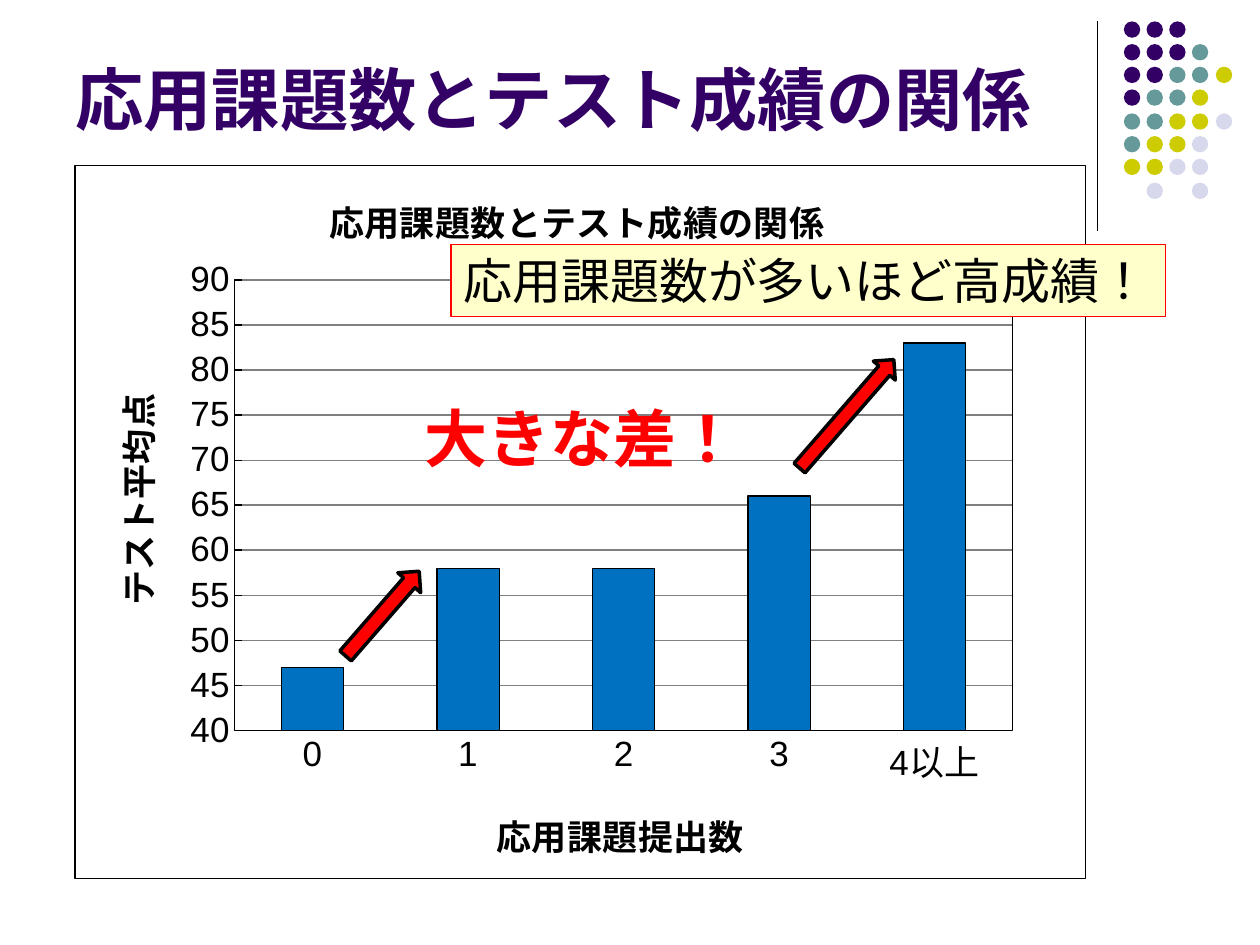
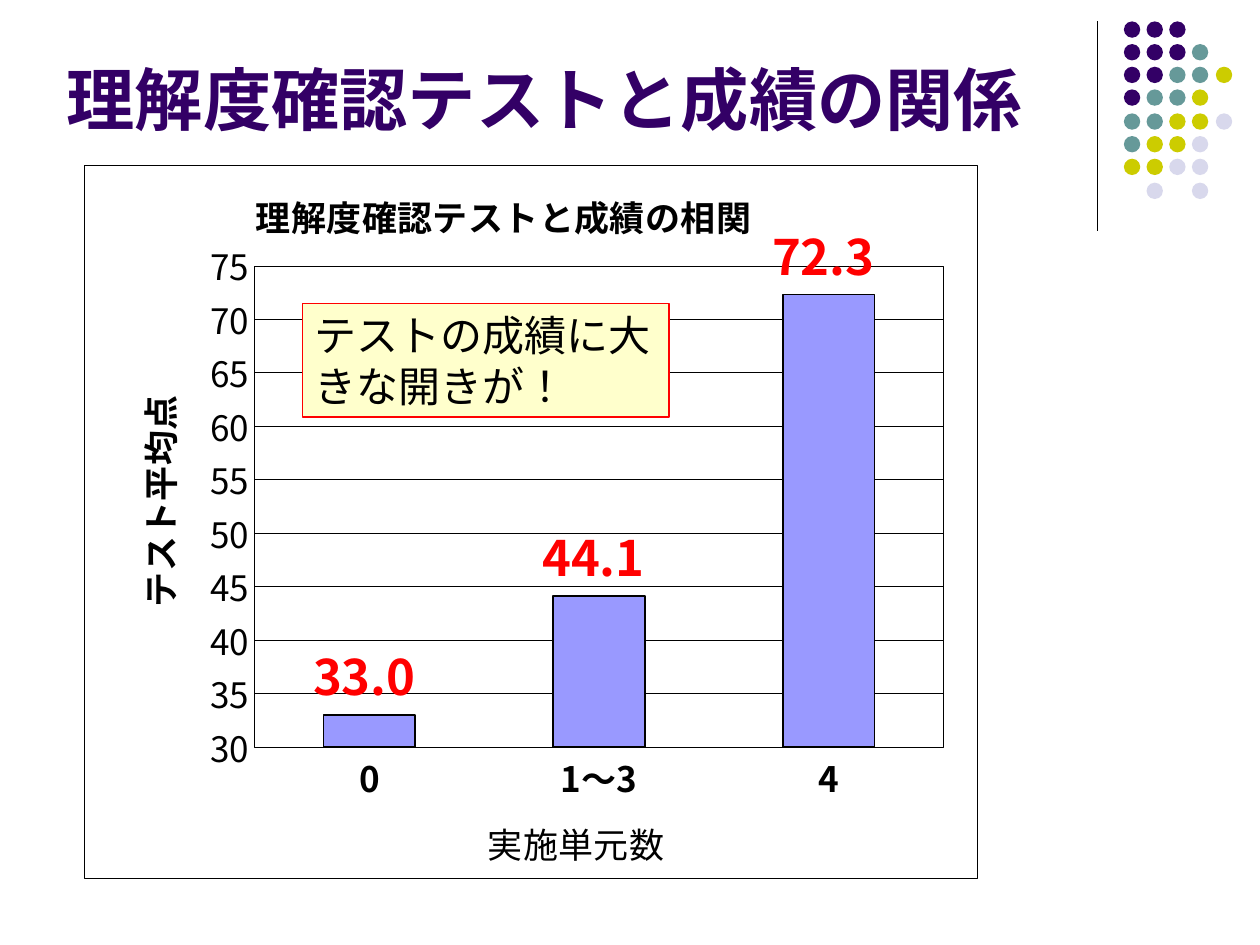
from dataclasses import dataclass

from pptx import Presentation
from pptx.chart.data import CategoryChartData
from pptx.dml.color import RGBColor
from pptx.enum.chart import XL_CHART_TYPE, XL_LABEL_POSITION, XL_TICK_MARK
from pptx.enum.lang import MSO_LANGUAGE_ID
from pptx.enum.shapes import MSO_CONNECTOR, MSO_SHAPE
from pptx.enum.text import MSO_ANCHOR
from pptx.oxml import parse_xml
from pptx.oxml.ns import nsdecls
from pptx.util import Emu, Pt

COLUMNS = XL_CHART_TYPE.COLUMN_CLUSTERED
OUTSIDE_END = XL_LABEL_POSITION.OUTSIDE_END
TICK_NONE, TICK_IN = XL_TICK_MARK.NONE, XL_TICK_MARK.INSIDE
JAPANESE = MSO_LANGUAGE_ID.JAPANESE
STRAIGHT = MSO_CONNECTOR.STRAIGHT
ELLIPSE, RIGHT_ARROW = MSO_SHAPE.OVAL, MSO_SHAPE.RIGHT_ARROW
TOP, BOTTOM = MSO_ANCHOR.TOP, MSO_ANCHOR.BOTTOM
PX = 9144


@dataclass(frozen=True)
class Theme:
    latin: str = "Arial"
    japanese: str = "Noto Sans CJK JP"
    black: str = "000000"
    white: str = "FFFFFF"
    purple: str = "330066"
    teal: str = "669999"
    olive: str = "CCCC00"
    lavender: str = "D8D8EC"
    red: str = "FF0000"
    cream: str = "FFFFCC"
    gray: str = "808080"
    blue: str = "0070C0"
    periwinkle: str = "9999FF"
    title_size: int = 39
    shout_size: int = 36
    label_size: int = 28
    remark_size: int = 24
    chart_size: int = 20
    hairline: float = 0.75


@dataclass(frozen=True)
class ChartStyle:
    font: str
    bar: str
    bar_line: float
    grid: str
    line: float
    plot: tuple
    title_at: tuple
    category_at: tuple
    value_at: tuple
    bold_categories: bool = False
    bold_category_title: bool = True
    label_format: str = ""


def rgb(color):
    return RGBColor.from_string(color)


def set_line(line, color, width):
    line.color.rgb = rgb(color)
    line.width = Pt(width)


def set_font(font, name, size, color, bold=False):
    font.name, font.size, font.bold = name, Pt(size), bold
    font.color.rgb = rgb(color)


def manual_layout(place, frame, inner=False):
    target = '<c:layoutTarget val="inner"/>' if inner else ""
    modes = "".join(f'<c:{axis}Mode val="edge"/>' for axis in "xy")
    values = "".join(f'<c:{key} val="{length / whole}"/>'
                     for key, length, whole in zip("xywh", place, frame * 2))
    return parse_xml(f'<c:layout {nsdecls("c")}><c:manualLayout>{target}{modes}{values}'
                     "</c:manualLayout></c:layout>")


def framed_area(fill, color, width):
    return parse_xml(
        f'<c:spPr {nsdecls("c", "a")}><a:solidFill><a:srgbClr val="{fill}"/></a:solidFill>'
        f'<a:ln w="{Pt(width)}"><a:solidFill><a:srgbClr val="{color}"/></a:solidFill></a:ln></c:spPr>')


class Deck:
    def __init__(self, theme):
        self.theme = theme
        self.file = Presentation()
        self.file.slide_width, self.file.slide_height = Emu(1000 * PX), Emu(750 * PX)
        self.slide = None

    def start_slide(self, title, left, top, height):
        self.slide = self.file.slides.add_slide(self.file.slide_layouts[6])
        self.corner_ornament()
        self.text(title, (left, top, 825, height), self.theme.title_size,
                  self.theme.purple, bold=True, anchor=BOTTOM)

    def box(self, place):
        return [Emu(value * PX) for value in place]

    def corner_ornament(self):
        theme = self.theme
        rule = self.slide.shapes.add_connector(STRAIGHT, *self.box((871, 17, 871, 183)))
        set_line(rule.line, theme.black, theme.hairline)
        rule._element.spPr.append(parse_xml(f'<a:effectLst {nsdecls("a")}/>'))
        colors = {"P": theme.purple, "T": theme.teal, "Y": theme.olive, "L": theme.lavender}
        rows = "PPP", "PPPT", "PPTTY", "PTTY", "TTYYL", "TYYL", "YYLL", "-L-L"
        dots = self.slide.shapes.add_group_shape()
        for row, pattern in enumerate(rows):
            for column, key in enumerate(pattern):
                if key in colors:
                    place = (892 + int(18.3 * column), 17 + int(18.3 * row), 13, 13)
                    dot = dots.shapes.add_shape(ELLIPSE, *self.box(place))
                    dot.shadow.inherit = False
                    dot.fill.solid()
                    dot.fill.fore_color.rgb = rgb(colors[key])
                    dot.line.fill.background()

    def add_run(self, paragraph, words, size, color, bold, font):
        run = paragraph.add_run()
        run.text = words
        set_font(run.font, font, size, color, bold)
        run.font.language_id = JAPANESE
        run.font._element.find("{*}latin").addnext(
            parse_xml(f'<a:ea {nsdecls("a")} typeface="{self.theme.japanese}"/>'))

    def text(self, words, place, size, color, bold=False, anchor=TOP):
        box = self.slide.shapes.add_textbox(*self.box(place))
        frame = box.text_frame
        frame.word_wrap = True
        frame.vertical_anchor = anchor
        self.add_run(frame.paragraphs[0], words, size, color, bold, self.theme.latin)
        return box

    def callout(self, words, place, size):
        box = self.text(words, place, size, self.theme.black)
        box.fill.solid()
        box.fill.fore_color.rgb = rgb(self.theme.cream)
        set_line(box.line, self.theme.red, self.theme.hairline)

    def rising_arrow(self, place):
        arrow = self.slide.shapes.add_shape(RIGHT_ARROW, *self.box(place))
        arrow.shadow.inherit = False
        arrow.rotation = 311
        arrow.fill.solid()
        arrow.fill.fore_color.rgb = rgb(self.theme.red)
        set_line(arrow.line, self.theme.black, 2)

    def chart_heading(self, heading, words, layout, font, bold=True, rotation=0):
        paragraph = heading.text_frame.paragraphs[0]
        self.add_run(paragraph, words, self.theme.chart_size, self.theme.black, bold, font)
        element = heading._element
        for default in element.xpath("c:layout"):
            element.remove(default)
        element.xpath("c:tx")[0].addnext(layout)
        body = element.xpath("c:tx/c:rich/a:bodyPr")[0]
        body.set("rot", str(rotation * 60000))
        body.set("vert", "horz")

    def column_chart(self, place, titles, points, limits, style):
        theme, frame = self.theme, place[2:]
        data = CategoryChartData()
        data.categories = list(points)
        data.add_series("テスト平均点", list(points.values()))
        chart = self.slide.shapes.add_chart(COLUMNS, *self.box(place), data).chart
        chart.has_legend = False
        set_font(chart.font, style.font, theme.chart_size, theme.black)

        title, category_title, value_title = titles
        category, value = chart.category_axis, chart.value_axis
        chart.has_title = True
        self.chart_heading(chart.chart_title, title,
                           manual_layout(style.title_at, frame), style.font)
        self.chart_heading(category.axis_title, category_title,
                           manual_layout(style.category_at, frame),
                           style.font, style.bold_category_title)
        self.chart_heading(value.axis_title, value_title,
                           manual_layout(style.value_at, frame), style.font, rotation=-90)

        for axis, tick, bold in ((category, TICK_NONE, style.bold_categories),
                                 (value, TICK_IN, False)):
            axis.major_tick_mark, axis.minor_tick_mark = tick, TICK_NONE
            set_line(axis.format.line, theme.black, style.line)
            set_font(axis.tick_labels.font, style.font, theme.chart_size, theme.black, bold)
        value.minimum_scale, value.maximum_scale = limits
        value.major_unit = 5
        value.has_major_gridlines = True
        set_line(value.major_gridlines.format.line, style.grid, style.line)

        bars = chart.plots[0]
        bars.gap_width, bars.vary_by_categories = 150, False
        scores = bars.series[0]
        scores.format.fill.solid()
        scores.format.fill.fore_color.rgb = rgb(style.bar)
        set_line(scores.format.line, theme.black, style.bar_line)
        if style.label_format:
            labels = scores.data_labels
            labels.show_value = True
            labels.position = OUTSIDE_END
            labels.number_format, labels.number_format_is_linked = style.label_format, False
            set_font(labels.font, style.font, theme.label_size, theme.red, True)

        plot_area = chart.element.xpath("c:chart/c:plotArea")[0]
        for default in plot_area.xpath("c:layout"):
            plot_area.remove(default)
        plot_area.insert(0, manual_layout(style.plot, frame, inner=True))
        plot_area.append(framed_area(theme.white, theme.black, style.line))
        chart.element.xpath("c:chart")[0].addnext(
            framed_area(theme.white, theme.black, style.line))


def main():
    theme = Theme()
    deck = Deck(theme)

    assignments = ChartStyle(
        font=theme.latin, bar=theme.blue, bar_line=0.75, grid=theme.gray, line=0.75,
        plot=(127, 91, 618, 358), title_at=(197, 16),
        category_at=(330, 504), value_at=(21, 176))
    deck.start_slide("応用課題数とテスト成績の関係", 50, 13, 102)
    deck.column_chart(
        (59, 131, 803, 567),
        ("応用課題数とテスト成績の関係", "応用課題提出数", "テスト平均点"),
        {"0": 47, "1": 58, "2": 58, "3": 66, "4以上": 83}, (40, 90), assignments)
    deck.callout("応用課題数が多いほど高成績！", (358, 194, 567, 57), theme.label_size)
    deck.rising_arrow((259, 475, 89, 24))
    deck.rising_arrow((615, 317, 114, 23))
    deck.text("大きな差！", (327, 312, 291, 71), theme.shout_size, theme.red, bold=True)

    comprehension = ChartStyle(
        font=theme.japanese, bar=theme.periwinkle, bar_line=1, grid=theme.black, line=0.25,
        plot=(135, 80, 547, 383), title_at=(131, 12),
        category_at=(315, 511), value_at=(31, 178),
        bold_categories=True, bold_category_title=False,
        label_format=r"#,##0.0_);[Red]\(#,##0.0\)")
    deck.start_slide("理解度確認テストと成績の関係", 43, 36, 79)
    deck.column_chart(
        (67, 131, 709, 567),
        ("理解度確認テストと成績の相関", "実施単元数", "テスト平均点"),
        {"0": 33, "1～3": 44.1, "4": 72.3}, (30, 75), comprehension)
    deck.callout("テストの成績に大きな開きが！", (240, 241, 291, 90), theme.remark_size)

    deck.file.save("out.pptx")


if __name__ == "__main__":
    main()
